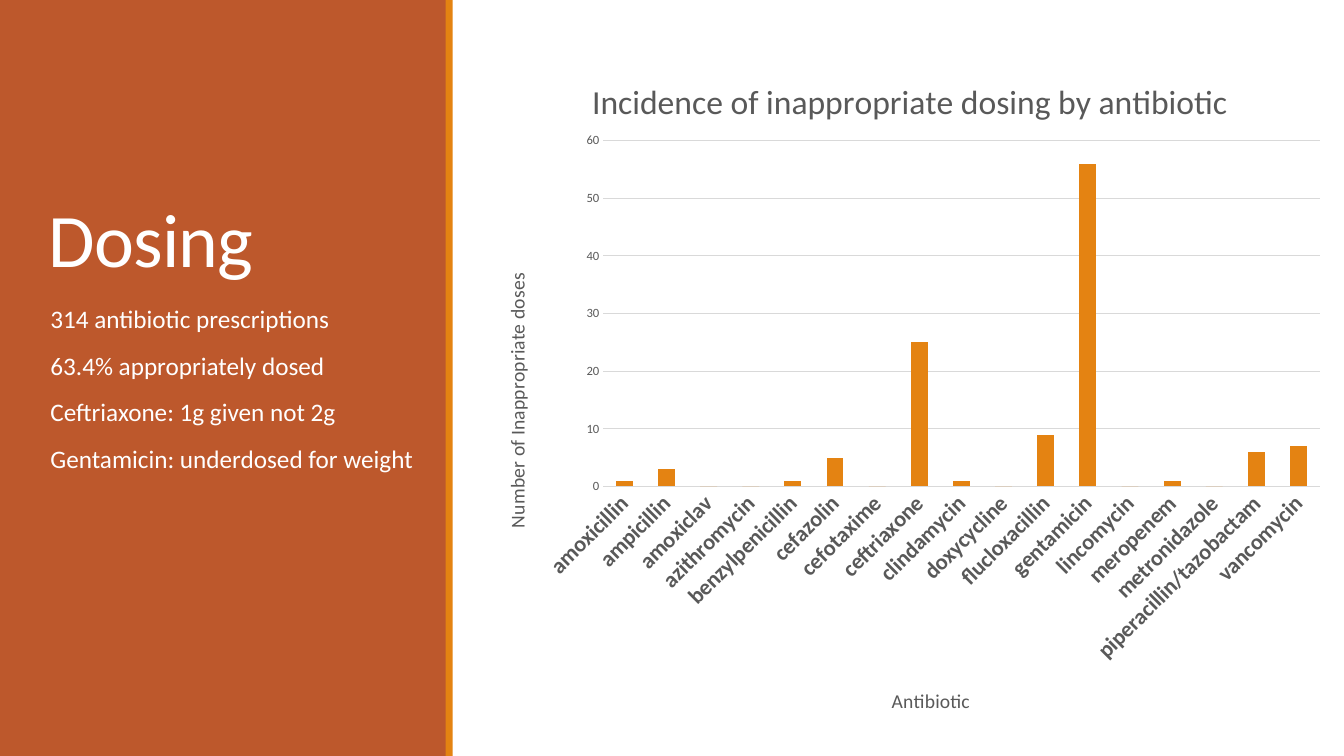
from lxml import etree
from pptx import Presentation
from pptx.chart.data import CategoryChartData
from pptx.dml.color import RGBColor
from pptx.enum.chart import XL_CHART_TYPE, XL_TICK_MARK
from pptx.enum.shapes import MSO_SHAPE
from pptx.enum.text import MSO_ANCHOR, MSO_AUTO_SIZE, PP_ALIGN
from pptx.oxml.ns import qn
from pptx.util import Inches, Pt

RECTANGLE = MSO_SHAPE.RECTANGLE
COLUMNS = XL_CHART_TYPE.COLUMN_CLUSTERED
NO_TICK = XL_TICK_MARK.NONE
LEFT = PP_ALIGN.LEFT
TOP, BOTTOM = MSO_ANCHOR.TOP, MSO_ANCHOR.BOTTOM

RUST = RGBColor(0xBD, 0x58, 0x2C)
ORANGE = RGBColor(0xE4, 0x83, 0x12)
WHITE = RGBColor(0xFF, 0xFF, 0xFF)
GREY = RGBColor(0x59, 0x59, 0x59)
PALE_GREY = RGBColor(0xD9, 0xD9, 0xD9)
FONT = "Calibri"
WIDTH, HEIGHT = 13.33, 7.5
DEGREE = 60000

FINDINGS = [
    "314 antibiotic prescriptions",
    "63.4% appropriately dosed",
    "Ceftriaxone: 1g given not 2g",
    "Gentamicin: underdosed for weight",
]
DOSES = {
    "amoxicillin": 1, "ampicillin": 3, "amoxiclav": 0, "azithromycin": 0,
    "benzylpenicillin": 1, "cefazolin": 5, "cefotaxime": 0, "ceftriaxone": 25,
    "clindamycin": 1, "doxycycline": 0, "flucloxacillin": 9, "gentamicin": 56,
    "lincomycin": 0, "meropenem": 1, "metronidazole": 0,
    "piperacillin/tazobactam": 6, "vancomycin": 7,
}


def style_font(font, size, color, bold=False):
    font.name, font.size, font.bold = FONT, Pt(size), bold
    font.color.rgb = color


def add_panel(page, left, width, color):
    """Add a full-height band behind the placeholders."""
    panel = page.shapes.add_shape(RECTANGLE, Inches(left), 0, Inches(width), Inches(HEIGHT))
    panel.shadow.inherit = False
    panel.fill.solid()
    panel.fill.fore_color.rgb = color
    panel.line.fill.background()


def fill_placeholder(holder, lines, place, size, anchor, line_spacing,
                     before=0, after=0, indent=0, side_inset=0.1, tracking=0):
    """Move a placeholder to the front, place it and fill it with plain lines."""
    holder.element.getparent().append(holder.element)
    holder.left, holder.top, holder.width, holder.height = map(Inches, place)
    frame = holder.text_frame
    frame.text = "\n".join(lines)
    frame.word_wrap = True
    frame.auto_size = MSO_AUTO_SIZE.NONE
    frame.vertical_anchor = anchor
    frame.margin_left = frame.margin_right = Inches(side_inset)
    for para in frame.paragraphs:
        para.alignment = LEFT
        para.line_spacing = line_spacing
        para.space_before, para.space_after = Pt(before), Pt(after)
        settings = para._p.get_or_add_pPr()
        settings.set("marL", str(Inches(indent)))
        settings.set("indent", "0")
        etree.SubElement(settings, qn("a:buNone"))
        for span in para.runs:
            style_font(span.font, size, WHITE)
            span._r.get_or_add_rPr().set("spc", str(round(tracking * 100)))


def set_layout(element, position, **shares):
    """Fix a chart part at shares of the chart's size."""
    for previous in element.findall(qn("c:layout")):
        element.remove(previous)
    layout = etree.Element(qn("c:layout"))
    manual = etree.SubElement(layout, qn("c:manualLayout"))
    if "w" in shares:
        etree.SubElement(manual, qn("c:layoutTarget")).set("val", "inner")
    for mode in ("xMode", "yMode"):
        etree.SubElement(manual, qn(f"c:{mode}")).set("val", "edge")
    for name, share in shares.items():
        etree.SubElement(manual, qn(f"c:{name}")).set("val", str(share))
    element.insert(position, layout)


def write_title(title, text, size, x, y, rotation=0):
    frame = title.text_frame
    frame.text = text
    style_font(frame.paragraphs[0].runs[0].font, size, GREY)
    frame._txBody.bodyPr.set("rot", str(rotation * DEGREE))
    frame._txBody.bodyPr.set("vert", "horz")
    set_layout(title._element, 1, x=x, y=y)


def format_axis(axis, size, bold=False):
    axis.major_tick_mark = axis.minor_tick_mark = NO_TICK
    style_font(axis.tick_labels.font, size, GREY, bold)


def add_dose_chart(page, place):
    chart_data = CategoryChartData()
    chart_data.categories = list(DOSES)
    chart_data.add_series("Series 1", list(DOSES.values()))
    chart = page.shapes.add_chart(COLUMNS, *map(Inches, place), chart_data).chart
    chart.font.name, chart.font.size = FONT, Pt(10)
    chart.has_legend = False
    write_title(chart.chart_title, "Incidence of inappropriate dosing by antibiotic",
                24, x=0.13, y=0.03)
    set_layout(chart._chartSpace.chart.plotArea, 0, x=0.15, y=0.13, w=0.83, h=0.51)

    plot = chart.plots[0]
    plot.gap_width = 150
    plot.vary_by_categories = False
    bars = plot.series[0].format.fill
    bars.solid()
    bars.fore_color.rgb = ORANGE

    antibiotics, doses = chart.category_axis, chart.value_axis
    format_axis(antibiotics, 16, bold=True)
    antibiotics.format.line.color.rgb = PALE_GREY
    antibiotics._element.find(qn("c:txPr")).find(qn("a:bodyPr")).set("rot", str(-45 * DEGREE))
    write_title(antibiotics.axis_title, "Antibiotic", 14, x=0.48, y=0.93)

    format_axis(doses, 9)
    doses.format.line.fill.background()
    doses.minimum_scale, doses.maximum_scale, doses.major_unit = 0, 60, 10
    doses.major_gridlines.format.line.color.rgb = PALE_GREY
    doses.major_gridlines.format.line.width = Pt(0.75)
    write_title(doses.axis_title, "Number of Inappropriate doses", 14,
                x=0.03, y=0.32, rotation=-90)


def main():
    deck = Presentation()
    deck.slide_width, deck.slide_height = Inches(WIDTH), Inches(HEIGHT)
    page = deck.slides.add_slide(deck.slide_layouts[1])
    add_panel(page, 0, 4.43, RUST)
    add_panel(page, 4.42, 0.07, ORANGE)
    fill_placeholder(page.shapes.title, ["Dosing"], (0.38, 0.56, 3.37, 2.3), 54,
                     BOTTOM, 0.85, tracking=-0.5)
    fill_placeholder(page.placeholders[1], FINDINGS, (0.4, 2.99, 3.81, 3.65), 18,
                     TOP, 0.9, before=12, after=2, indent=0.1, side_inset=0)
    add_dose_chart(page, (4.7, 0.52, 8.56, 6.73))
    deck.save("out.pptx")


if __name__ == "__main__":
    main()
